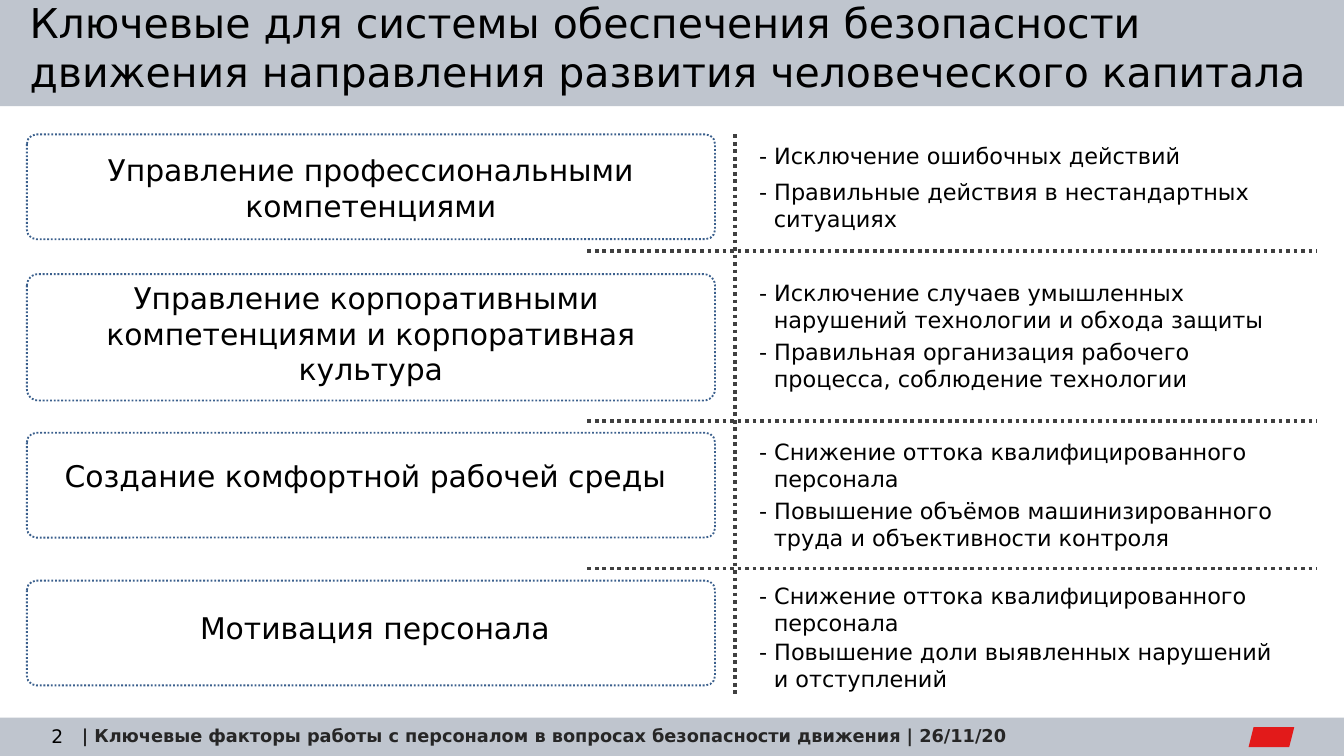
from lxml.etree import SubElement
from pptx import Presentation
from pptx.dml.color import RGBColor
from pptx.enum.dml import MSO_LINE
from pptx.enum.shapes import MSO_CONNECTOR, MSO_SHAPE
from pptx.enum.text import MSO_ANCHOR, MSO_AUTO_SIZE, PP_ALIGN as ALIGN
from pptx.oxml.ns import qn
from pptx.util import Inches, Pt

COLORS = {"band": "BFC5CE", "frame": "3A5F8C", "divider": "404040",
          "text": "000000", "footer": "262626", "mark": "E21A1A"}
FONT = "DejaVu Sans"
WIDTH = 10
HEIGHT = WIDTH * 9 / 16

# Columns: framed topic, vertical divider, effects
FRAME_LEFT, FRAME_WIDTH = 0.2, 5.12
DIVIDER_X, DIVIDER_LEFT, DIVIDER_RIGHT = 5.47, 4.37, 9.8
EFFECT_LEFT, EFFECT_WIDTH = 5.55, 4.17
EFFECT_INDENT = Inches(0.11)

# Rows: frame top and height, topic box (left, top, width, height) and lines,
# effects (top, text), y of the divider below
ROWS = [
    (1.0, 0.78, (0.28, 1.08, 4.96, 0.64),
     ["Управление профессиональными", "компетенциями"],
     [(1.01, "- Исключение ошибочных действий"),
      (1.28, "- Правильные действия в нестандартных\vситуациях")], 1.87),
    (2.04, 0.94, (0.2, 2.03, 5.12, 0.91),
     ["Управление корпоративными ", "компетенциями и корпоративная культура"],
     [(2.03, "- Исключение случаев умышленных\vнарушений технологии и обхода защиты"),
      (2.47, "- Правильная организация рабочего\vпроцесса, соблюдение технологии")], 3.13),
    (3.22, 0.78, (0.28, 3.36, 4.88, 0.37),
     ["Создание комфортной рабочей среды"],
     [(3.21, "- Снижение оттока квалифицированного\vперсонала"),
      (3.65, "- Повышение объёмов машинизированного\vтруда и объективности контроля")], 4.23),
    (4.32, 0.78, (0.43, 4.49, 4.72, 0.37),
     ["Мотивация персонала"],
     [(4.28, "- Снижение оттока квалифицированного\vперсонала"),
      (4.7, "- Повышение доли выявленных нарушений\vи отступлений")], None),
]

presentation = Presentation()
presentation.slide_width, presentation.slide_height = Inches(WIDTH), Inches(HEIGHT)
slide = presentation.slides.add_slide(presentation.slide_layouts[5])
shapes = slide.shapes


def add_block(kind, box, fill=None, line=None):
    """Add a preset shape that has either a plain fill or a dotted outline."""
    shape = shapes.add_shape(kind, *map(Inches, box))
    shape.shadow.inherit = False
    if fill:
        shape.fill.solid()
        shape.fill.fore_color.rgb = RGBColor.from_string(COLORS[fill])
        shape.line.fill.background()
    else:
        shape.fill.background()
        shape.line.color.rgb = RGBColor.from_string(COLORS[line])
        shape.line.width = Pt(1)
        shape.line.dash_style = MSO_LINE.ROUND_DOT
    return shape


def write_text(shape, box, lines, size, align=ALIGN.LEFT, color="text"):
    """Place a text shape and write one paragraph per line."""
    shape.left, shape.top, shape.width, shape.height = map(Inches, box)
    frame = shape.text_frame
    frame.text = "\n".join(lines)
    frame.word_wrap = True
    frame.auto_size = MSO_AUTO_SIZE.NONE
    for paragraph in frame.paragraphs:
        paragraph.alignment = align
        paragraph.font.size = Pt(size)
        paragraph.font.name = FONT
        paragraph.font.color.rgb = RGBColor.from_string(COLORS[color])
    return frame


# Header
header = add_block(MSO_SHAPE.RECTANGLE, (0, 0, WIDTH, 0.79), fill="band")
title = shapes.title
header.element.addnext(title.element)
title_frame = write_text(
    title, (0.12, 0, 9.76, 0.69),
    ["Ключевые для системы обеспечения безопасности "
     "движения направления развития человеческого капитала"], 22)
title_frame.vertical_anchor = MSO_ANCHOR.MIDDLE

# Footer
add_block(MSO_SHAPE.RECTANGLE, (0, 5.34, WIDTH, HEIGHT - 5.34), fill="band")
add_block(MSO_SHAPE.PARALLELOGRAM, (9.29, 5.41, 0.34, 0.15), fill="mark")
number = write_text(shapes.add_textbox(0, 0, 0, 0), (0.22, 5.39, 0.25, 0.17),
                    ["2"], 10, ALIGN.RIGHT)
number.margin_left = number.margin_right = number.margin_top = number.margin_bottom = 0
number.vertical_anchor = MSO_ANCHOR.MIDDLE
footer = write_text(
    shapes.add_textbox(0, 0, 0, 0), (0.51, 5.33, 7.95, 0.28),
    ["| Ключевые факторы работы с персоналом в вопросах безопасности движения | 26/11/20"],
    9.5, color="footer")
footer.paragraphs[0].font.bold = True
footer.paragraphs[0].line_spacing = 1.1

# Topics and their effects
for frame_top, frame_height, topic_box, topic, effects, _ in ROWS:
    topic_frame = add_block(MSO_SHAPE.ROUNDED_RECTANGLE,
                            (FRAME_LEFT, frame_top, FRAME_WIDTH, frame_height), line="frame")
    topic_frame.adjustments[0] = 0.09
    write_text(shapes.add_textbox(0, 0, 0, 0), topic_box, topic, 16, ALIGN.CENTER)
    for top, effect in effects:
        height = 0.5 if "\v" in effect else 0.3
        effect_frame = write_text(shapes.add_textbox(0, 0, 0, 0),
                                  (EFFECT_LEFT, top, EFFECT_WIDTH, height), [effect], 12)
        properties = effect_frame.paragraphs[0]._p.get_or_add_pPr()
        properties.set("marL", str(EFFECT_INDENT))
        properties.set("indent", str(-EFFECT_INDENT))

# Dotted dividers
dividers = [(DIVIDER_X, 1, DIVIDER_X, 5.17)]
dividers += [(DIVIDER_LEFT, row[-1], DIVIDER_RIGHT, row[-1]) for row in ROWS if row[-1]]
for ends in dividers:
    divider = shapes.add_connector(MSO_CONNECTOR.STRAIGHT, *map(Inches, ends))
    divider.line.color.rgb = RGBColor.from_string(COLORS["divider"])
    divider.line.width = Pt(2)
    divider.line.dash_style = MSO_LINE.ROUND_DOT
    SubElement(divider.element.spPr, qn("a:effectLst"))

presentation.save("out.pptx")
